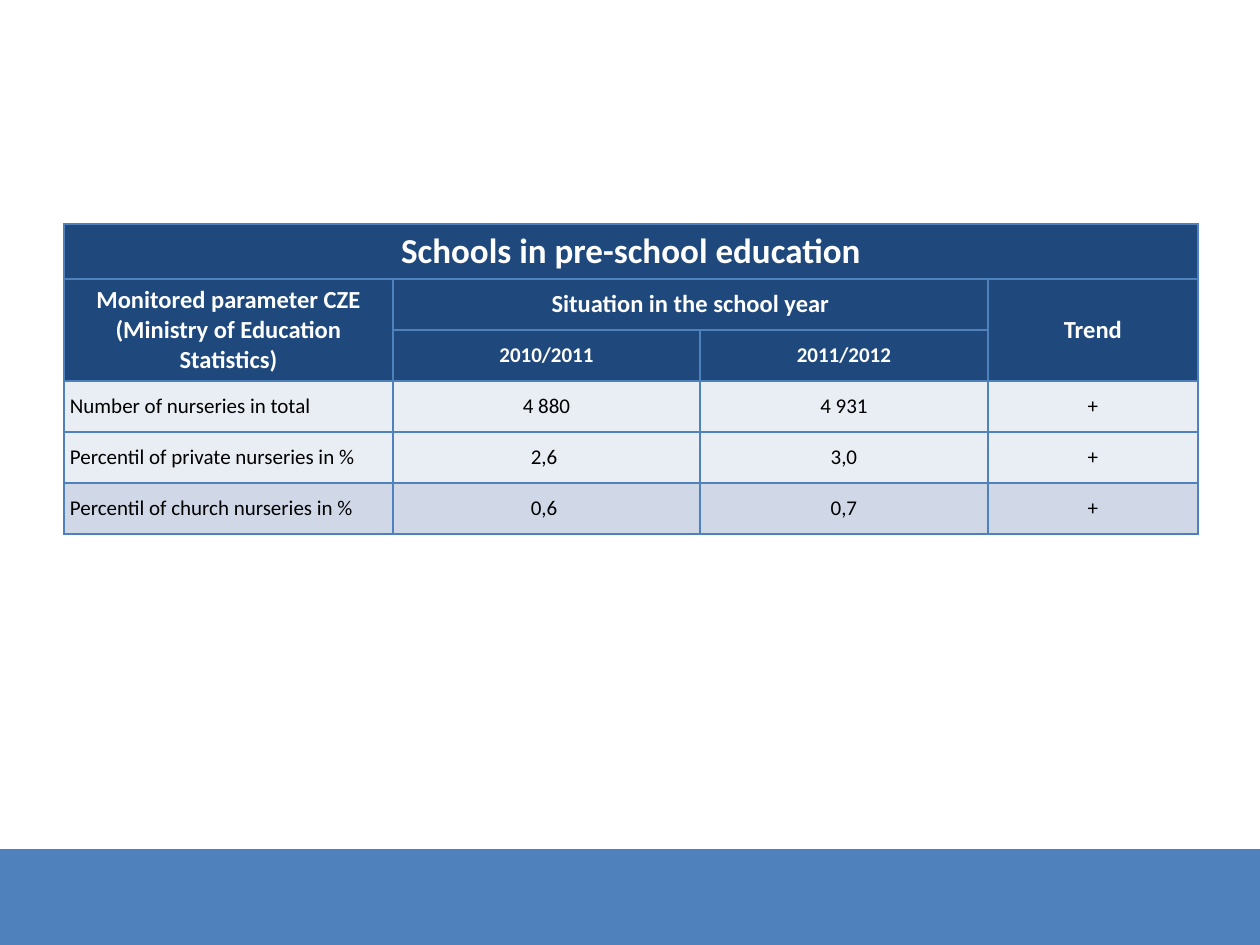
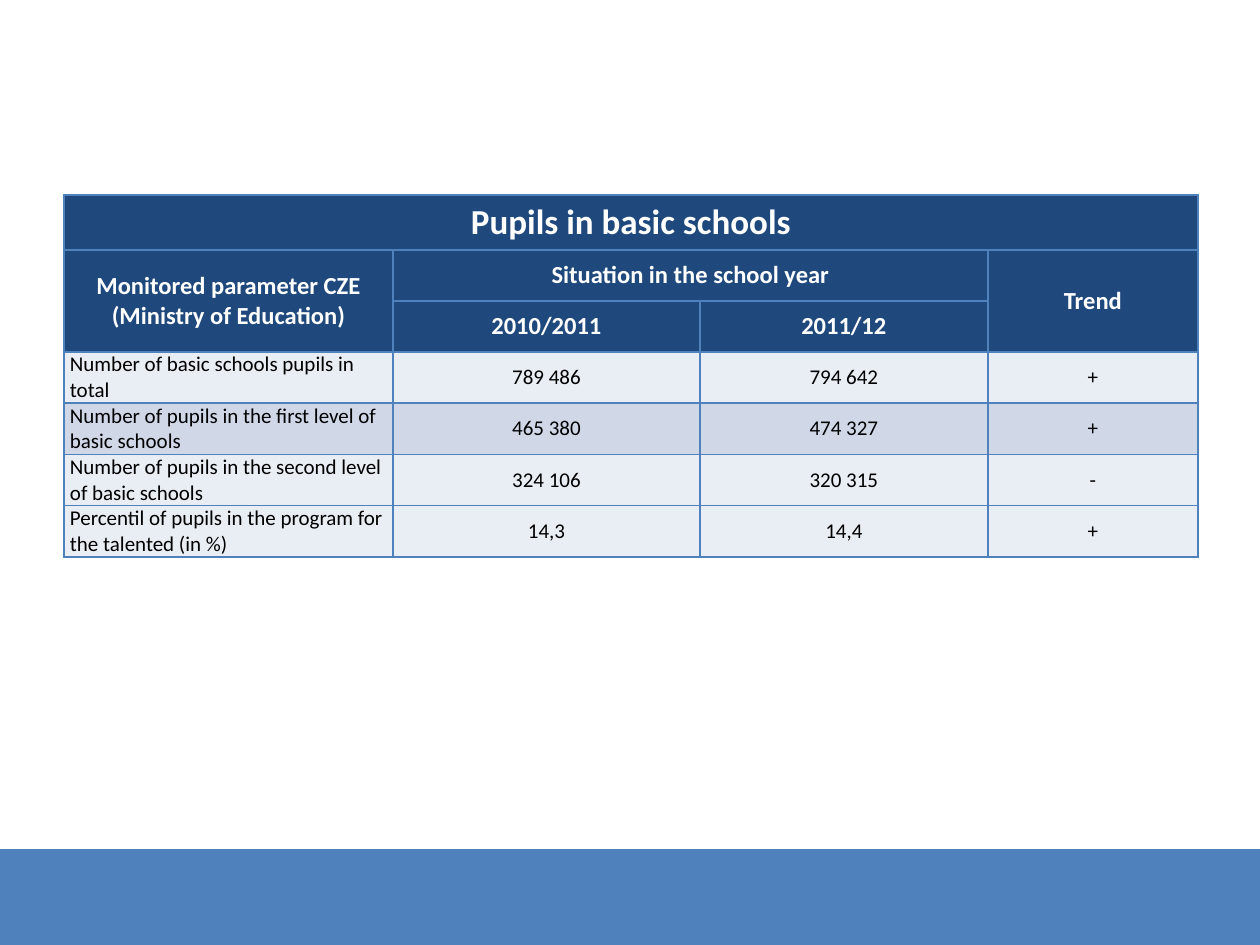
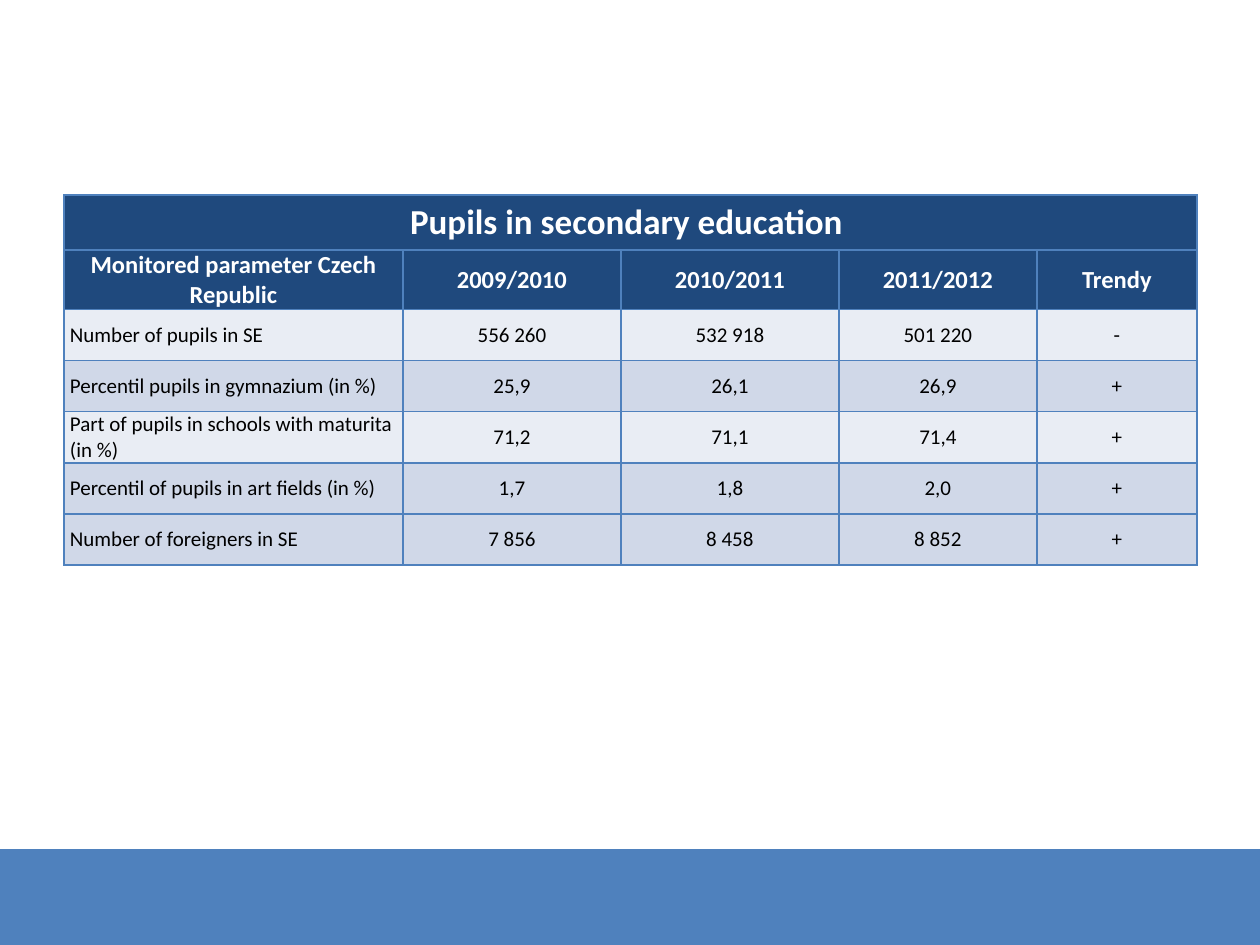
"""Builds three slides of school statistics tables above a shared blue band."""
from dataclasses import dataclass

from lxml.etree import SubElement
from pptx import Presentation
from pptx.dml.color import RGBColor
from pptx.enum.shapes import MSO_SHAPE
from pptx.enum.text import MSO_ANCHOR, PP_ALIGN
from pptx.oxml.ns import qn
from pptx.util import Pt


@dataclass(frozen=True)
class Theme:
    font: str = "Calibri"
    band: str = "4F81BD"
    header: str = "1F497D"
    light: str = "E9EDF4"
    shaded: str = "D0D8E8"
    header_text: str = "FFFFFF"
    body_text: str = "000000"
    title_size: int = 20
    header_size: int = 14
    body_size: int = 12
    border: int = 1


def px(length):
    return round(length * 914400 / 126)


def style_cell(cell, size, fill, color, bold, align, margins):
    properties = cell._tc.get_or_add_tcPr()
    for side in ("lnL", "lnR", "lnT", "lnB"):
        line = SubElement(properties, qn(f"a:{side}"), w=str(Pt(theme.border)))
        SubElement(SubElement(line, qn("a:solidFill")), qn("a:srgbClr"), val=theme.band)
    cell.fill.solid()
    cell.fill.fore_color.rgb = RGBColor.from_string(fill)
    cell.vertical_anchor = MSO_ANCHOR.MIDDLE
    cell.margin_left = cell.margin_right = px(margins[0])
    cell.margin_top = cell.margin_bottom = px(margins[1])
    para = cell.text_frame.paragraphs[0]
    para.alignment = align
    para.font.name = theme.font
    para.font.size = Pt(size)
    para.font.bold = bold
    para.font.color.rgb = RGBColor.from_string(color)


theme = Theme()
WIDE, TIGHT = (13, 6), (6, 0)
GROUPED_COLUMNS = (329, 307, 288, 210)
GROUPED_MERGES = ((1, 0, 2, 0), (1, 1, 1, 2), (1, 3, 2, 3))
SITUATION = "Situation in the school year"

tables = [
    dict(
        top=224, columns=GROUPED_COLUMNS, merges=GROUPED_MERGES,
        wide_rows=2, year_size=theme.body_size, shaded_rows=(2,),
        title="Schools in pre-school education",
        headers=[
            ("Monitored parameter CZE (Ministry of Education Statistics)", SITUATION, "", "Trend"),
            ("", "2010/2011", "2011/2012", ""),
        ],
        body=[
            ("Number of nurseries in total", "4 880", "4 931", "+"),
            ("Percentil of private nurseries in %", "2,6 ", "3,0", "+"),
            ("Percentil of church nurseries in %", "0,6 ", "0,7", "+"),
        ],
    ),
    dict(
        top=195, columns=GROUPED_COLUMNS, merges=GROUPED_MERGES,
        wide_rows=1, year_size=theme.header_size, shaded_rows=(1,),
        title="Pupils in basic schools",
        headers=[
            ("Monitored parameter CZE (Ministry of Education)", SITUATION, "", "Trend"),
            ("", "2010/2011", "2011/12", ""),
        ],
        body=[
            ("Number of basic schools pupils in total", "789 486", "794 642", "+"),
            ("Number of pupils in the first level of basic schools", "465 380", "474 327", "+"),
            ("Number of pupils in the second level of basic schools", "324 106", "320 315", "-"),
            ("Percentil of pupils in the program for the talented (in %)", "14,3", "14,4", "+"),
        ],
    ),
    dict(
        top=195, columns=(339, 218, 218, 198, 160), merges=(),
        wide_rows=1, year_size=theme.header_size, shaded_rows=(1, 3, 4),
        title="Pupils in secondary education ",
        headers=[
            ("Monitored parameter Czech Republic", "2009/2010", "2010/2011", "2011/2012", "Trendy"),
        ],
        body=[
            ("Number of pupils in SE", "556 260", "532 918", "501 220", "-"),
            ("Percentil pupils in gymnazium (in %)", "25,9", "26,1", "26,9", "+"),
            ("Part of pupils in schools with maturita (in %)", "71,2", "71,1", "71,4", "+"),
            ("Percentil of pupils in art fields (in %)", "1,7", "1,8", "2,0", "+"),
            ("Number of foreigners in SE", "7 856", "8 458", "8 852", "+"),
        ],
    ),
]

deck = Presentation()
deck.slide_width, deck.slide_height = px(1260), px(945)

for content in tables:
    page = deck.slides.add_slide(deck.slide_layouts[6])
    band = page.shapes.add_shape(MSO_SHAPE.RECTANGLE, 0, px(849), px(1260), px(96))
    band.shadow.inherit = False
    band.fill.solid()
    band.fill.fore_color.rgb = RGBColor.from_string(theme.band)
    band.line.fill.background()

    widths = content["columns"]
    title_row = (content["title"],) + ("",) * (len(widths) - 1)
    rows = [title_row, *content["headers"], *content["body"]]
    first_body = 1 + len(content["headers"])
    heights = [55] + [51] * (len(rows) - 1)
    frame = page.shapes.add_table(
        len(rows), len(widths), px(64), px(content["top"]), px(sum(widths)), px(sum(heights)))
    table = frame.table
    table.first_row = table.horz_banding = False
    for column, width in zip(table.columns, widths):
        column.width = px(width)

    for row_index, (values, height) in enumerate(zip(rows, heights)):
        table.rows[row_index].height = px(height)
        is_body = row_index >= first_body
        size = theme.body_size if is_body else theme.header_size
        if row_index == 0:
            size = theme.title_size
        elif row_index == 2 and not is_body:
            size = content["year_size"]
        fill = theme.header
        if is_body:
            is_shaded = row_index - first_body in content["shaded_rows"]
            fill = theme.shaded if is_shaded else theme.light
        color = theme.body_text if is_body else theme.header_text
        margins = WIDE if row_index < content["wide_rows"] else TIGHT
        for column_index, value in enumerate(values):
            cell = table.cell(row_index, column_index)
            cell.text = value
            align = PP_ALIGN.LEFT if is_body and column_index == 0 else PP_ALIGN.CENTER
            style_cell(cell, size, fill, color, not is_body, align, margins)

    for top, left, bottom, right in ((0, 0, 0, len(widths) - 1), *content["merges"]):
        table.cell(top, left).merge(table.cell(bottom, right))

deck.save("out.pptx")
